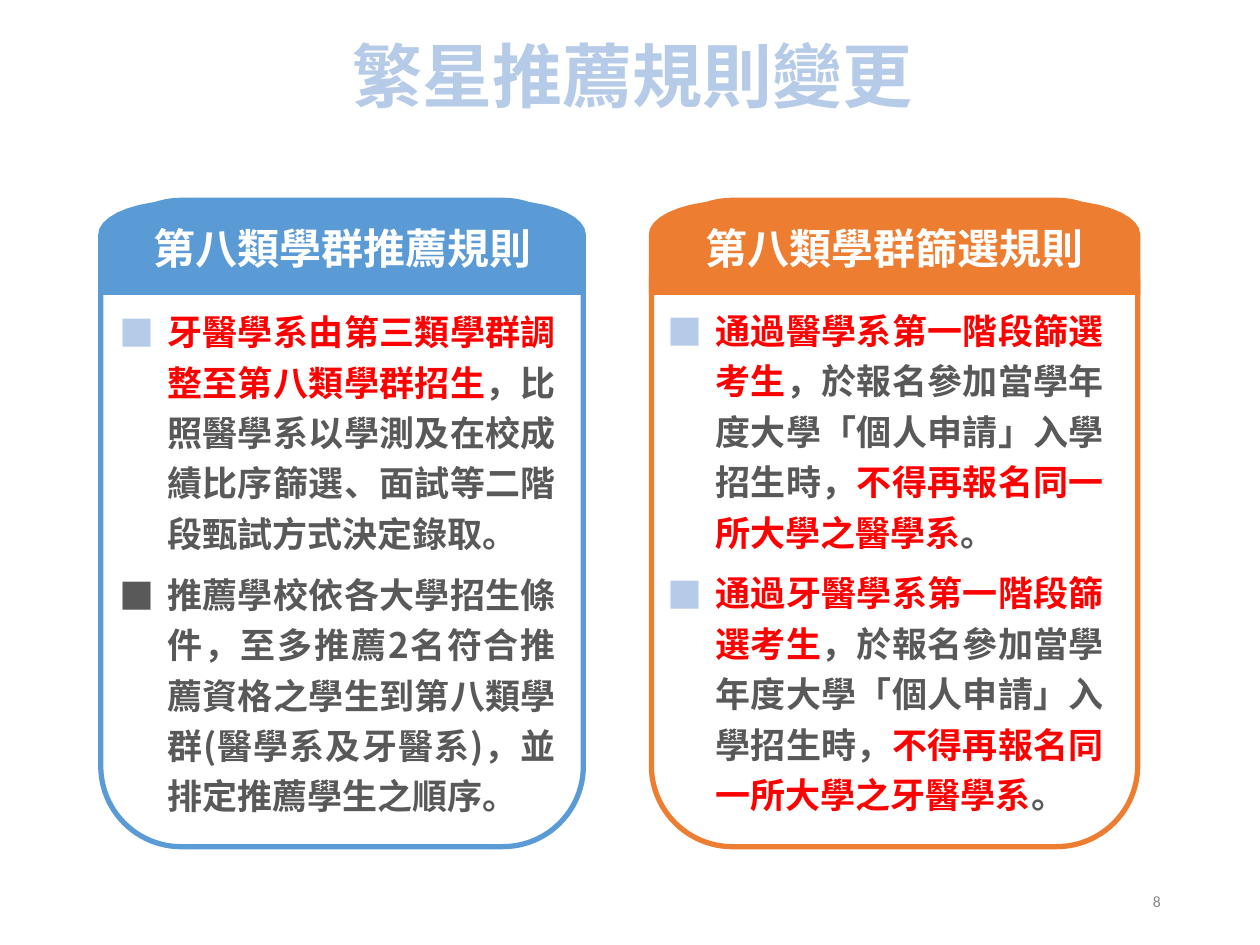
import math

from lxml import etree
from pptx import Presentation
from pptx.dml.color import RGBColor
from pptx.enum import shapes, text
from pptx.oxml import ns
from pptx.util import Inches, Pt

CJK_FONT = "Noto Sans CJK SC"
PALE_BLUE = RGBColor(0xB5, 0xCB, 0xE7)
BLUE = RGBColor(0x5B, 0x9B, 0xD5)
ORANGE = RGBColor(0xED, 0x7D, 0x31)
WHITE = RGBColor(0xFF, 0xFF, 0xFF)
RED = RGBColor(0xFF, 0x00, 0x00)
DARK_GRAY = RGBColor(0x59, 0x59, 0x59)
LIGHT_GRAY = RGBColor(0x89, 0x89, 0x89)

TOP = 1.59
HEADER_HEIGHT = 0.75
CORNER_WIDTH, CORNER_HEIGHT = 0.65, 0.27


def add_run(paragraph, words, size, color, bold=True, font_name=CJK_FONT):
    run = paragraph.add_run()
    run.text = words
    run.font.size = Pt(size)
    run.font.bold = bold
    run.font.color.rgb = color
    run.font.name = font_name
    east_asian = etree.SubElement(run.font._element, ns.qn("a:ea"))
    east_asian.set("typeface", font_name)


def set_bullet(paragraph, color):
    """Give the paragraph a hanging square bullet; None follows the text colour."""
    properties = paragraph._p.get_or_add_pPr()
    properties.set("marL", str(Inches(0.38)))
    properties.set("indent", str(Inches(-0.38)))
    if color is not None:
        bullet_color = etree.SubElement(properties, ns.qn("a:buClr"))
        etree.SubElement(bullet_color, ns.qn("a:srgbClr")).set("val", str(color))
    etree.SubElement(properties, ns.qn("a:buFont")).set("typeface", CJK_FONT)
    etree.SubElement(properties, ns.qn("a:buChar")).set("char", "■")


presentation = Presentation()
presentation.slide_width = Inches(10)
presentation.slide_height = Inches(7.5)
slide = presentation.slides.add_slide(presentation.slide_layouts[5])

title = slide.shapes.title
title.left, title.top = Inches(2.11), Inches(0.21)
title.width, title.height = Inches(5.82), Inches(0.77)
title.text_frame.vertical_anchor = text.MSO_ANCHOR.MIDDLE
title.text_frame.paragraphs[0].alignment = text.PP_ALIGN.CENTER
add_run(title.text_frame.paragraphs[0], "繁星推薦規則變更", 40, PALE_BLUE)

APPLICATION = "，於報名參加當學年度大學「個人申請」入學招生時，"

# Each card: heading, colour, left, width, rules left, top and height,
# then the rules as (bullet colour, [(words, colour), ...])
cards = [
    ("第八類學群推薦規則", BLUE, 0.78, 3.87, 0.85, 2.35, 4.29, [
        (PALE_BLUE, [
            ("牙醫學系由第三類學群調整至第八類學群招生", RED),
            ("，比照醫學系以學測及在校成績比序篩選、面試等二階段甄試方式決定錄取。", DARK_GRAY),
        ]),
        (None, [
            ("推薦學校依各大學招生條件，至多推薦2名符合推薦資格之學生到第八類學群"
             "(醫學系及牙醫系)，並排定推薦學生之順序。", DARK_GRAY),
        ]),
    ]),
    ("第八類學群篩選規則", ORANGE, 5.15, 3.9, 5.2, 2.34, 4.19, [
        (PALE_BLUE, [
            (f"通過{department}第一階段篩選考生", RED),
            (APPLICATION, DARK_GRAY),
            (f"不得再報名同一所大學之{department}", RED),
            ("。", DARK_GRAY),
        ])
        for department in ("醫學系", "牙醫學系")
    ]),
]

for heading, color, left, width, rules_left, rules_top, rules_height, rules in cards:
    # Header with elliptical upper corners and square lower ones
    right, bottom = left + width, TOP + HEADER_HEIGHT
    outline = [(right, bottom), (left, bottom)]
    for center_x, start in ((left + CORNER_WIDTH, 180), (right - CORNER_WIDTH, 270)):
        for degrees in range(start, start + 91, 10):
            angle = math.radians(degrees)
            outline.append((center_x + CORNER_WIDTH * math.cos(angle),
                            TOP + CORNER_HEIGHT * (1 + math.sin(angle))))
    points = [(Inches(x), Inches(y)) for x, y in outline]
    builder = slide.shapes.build_freeform(*points[0])
    builder.add_line_segments(points[1:], close=True)
    header = builder.convert_to_shape()
    header.shadow.inherit = False
    header.fill.solid()
    header.fill.fore_color.rgb = color
    header.line.fill.background()
    header.text_frame.word_wrap = True
    header.text_frame.vertical_anchor = text.MSO_ANCHOR.MIDDLE
    header.text_frame.paragraphs[0].alignment = text.PP_ALIGN.CENTER
    add_run(header.text_frame.paragraphs[0], heading, 24, WHITE)

    frame = slide.shapes.add_shape(
        shapes.MSO_SHAPE.ROUNDED_RECTANGLE,
        Inches(left + 0.02), Inches(TOP), Inches(width - 0.04), Inches(5.13))
    frame.shadow.inherit = False
    frame.fill.background()
    frame.line.color.rgb = color
    frame.line.width = Pt(3)

    rules_box = slide.shapes.add_textbox(
        Inches(rules_left), Inches(rules_top), Inches(3.66), Inches(rules_height))
    rules_box.text_frame.word_wrap = True
    for index, (bullet_color, parts) in enumerate(rules):
        if index == 0:
            paragraph = rules_box.text_frame.paragraphs[0]
        else:
            paragraph = rules_box.text_frame.add_paragraph()
            paragraph.space_before = Pt(6)
        paragraph.alignment = text.PP_ALIGN.JUSTIFY
        paragraph.line_spacing = 1.2
        set_bullet(paragraph, bullet_color)
        for words, text_color in parts:
            add_run(paragraph, words, 20, text_color)

page_number = slide.shapes.add_textbox(
    Inches(6.62), Inches(6.95), Inches(2.69), Inches(0.4))
page_number.text_frame.word_wrap = True
page_number.text_frame.vertical_anchor = text.MSO_ANCHOR.MIDDLE
page_number.text_frame.paragraphs[0].alignment = text.PP_ALIGN.RIGHT
add_run(page_number.text_frame.paragraphs[0], "8", 9, LIGHT_GRAY, False, "Calibri")

presentation.save("out.pptx")
